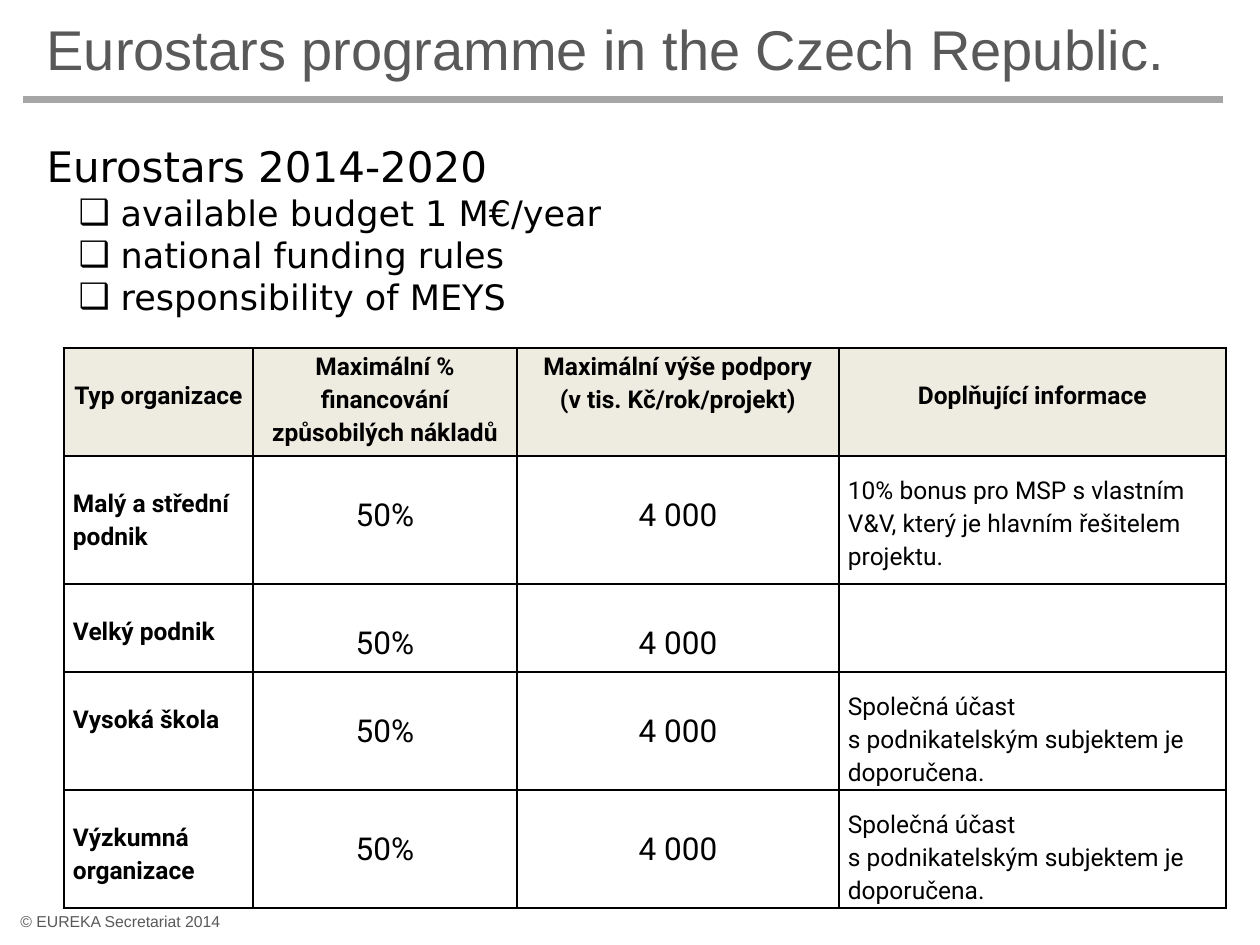
from lxml.etree import SubElement
from pptx import Presentation
from pptx.dml.color import RGBColor
from pptx.enum.shapes import MSO_CONNECTOR
from pptx.enum.text import MSO_ANCHOR, MSO_AUTO_SIZE, PP_ALIGN
from pptx.oxml.ns import qn
from pptx.util import Pt

TITLE = "Eurostars programme in the Czech Republic."
HEAD = "Eurostars 2014-2020"
POINTS = ["available budget 1 M€/year", "national funding rules", "responsibility of MEYS"]
FOOT = "© EUREKA Secretariat 2014"
RATE, CAP = "50%", "4\u00a0000"
JOINT = "Společná účast\vs\u00a0podnikatelským subjektem je doporučena."
HEADS = [
    ("Typ organizace", 29),
    ("Maximální % financování způsobilých nákladů", 0),
    ("Maximální výše podpory\n(v tis. Kč/rok/projekt)", 0),
    ("Doplňující informace", 29),
]
KINDS = [
    ("Malý a střední podnik",
     "10% bonus pro MSP s\u00a0vlastním V&V, který je hlavním řešitelem projektu."),
    ("Velký podnik", ""),
    ("Vysoká škola", JOINT),
    ("Výzkumná organizace", JOINT),
]
COLS = [189, 264, 322, 387]
ROWS = [108, 128, 88, 118, 118]
HEX = {"ink": "000000", "gray": "595959", "rule": "A6A6A6", "head": "EEECE1"}


def px(n):
    return round(n * 914400 / 126)


def tone(name):
    return RGBColor.from_string(HEX[name])


def place(shape, *box):
    shape.left, shape.top, shape.width, shape.height = map(px, box)


def style(par, face, size, color, bold=False, align=PP_ALIGN.LEFT, lead=1):
    par.alignment = align
    par.line_spacing = lead
    par.space_before = par.space_after = Pt(0)
    font = par.font
    font.name, font.size, font.bold = face, Pt(size), bold
    font.color.rgb = tone(color)


def bullet(par, mark, left=0, hang=0):
    props = par._p.get_or_add_pPr()
    props.set("marL", str(px(left)))
    props.set("indent", str(-px(hang)))
    if mark:
        SubElement(props, qn("a:buChar"), char=mark)
    else:
        SubElement(props, qn("a:buNone"))


def border(cell):
    props = cell._tc.get_or_add_tcPr()
    for side in "LRTB":
        line = SubElement(props, qn("a:ln" + side), w=str(Pt(1)))
        fill = SubElement(line, qn("a:solidFill"))
        SubElement(fill, qn("a:srgbClr"), val=HEX["ink"])


def write(cell, text, top, size=14, bold=False, align=PP_ALIGN.LEFT, fill=None):
    border(cell)
    if fill:
        cell.fill.solid()
        cell.fill.fore_color.rgb = tone(fill)
    else:
        cell.fill.background()
    cell.margin_left = cell.margin_right = px(9)
    cell.margin_top, cell.margin_bottom = px(top), 0
    cell.text = text
    for par in cell.text_frame.paragraphs:
        style(par, "Roboto", size, "ink", bold, align, 1.15)


def main():
    deck = Presentation()
    deck.slide_width, deck.slide_height = px(1260), px(945)
    slide = deck.slides.add_slide(deck.slide_layouts[1])
    shapes = slide.shapes

    rule = shapes.add_connector(MSO_CONNECTOR.STRAIGHT, px(23), px(100), px(1223), px(100))
    rule.line.color.rgb = tone("rule")
    rule.line.width = Pt(4)
    SubElement(rule._element.spPr, qn("a:effectLst"))

    title = shapes.title
    place(title, 34, 12, 1197, 72)
    frame = title.text_frame
    frame.text = TITLE
    frame.auto_size = MSO_AUTO_SIZE.NONE
    frame.vertical_anchor = MSO_ANCHOR.MIDDLE
    style(frame.paragraphs[0], "Arial", 32, "gray")

    body = slide.placeholders[1]
    place(body, 34, 116, 1226, 780)
    frame = body.text_frame
    frame.text = "\n".join([HEAD] + POINTS)
    frame.auto_size = MSO_AUTO_SIZE.NONE
    frame.vertical_anchor = MSO_ANCHOR.TOP
    frame.margin_top = px(25)
    first, *rest = frame.paragraphs
    bullet(first, None)
    style(first, "DejaVu Sans", 24, "ink", align=PP_ALIGN.JUSTIFY)
    for par in rest:
        bullet(par, "❑", 74, 42)
        style(par, "DejaVu Sans", 20, "ink", align=PP_ALIGN.JUSTIFY)

    foot = shapes.add_textbox(px(8), px(906), px(248), px(32))
    frame = foot.text_frame
    frame.word_wrap = True
    frame.text = FOOT
    style(frame.paragraphs[0], "Arial", 9, "gray")

    grid = shapes.add_table(len(ROWS), len(COLS), px(64), px(348),
                            px(sum(COLS)), px(sum(ROWS))).table
    grid.first_row = grid.horz_banding = False
    for col, wide in zip(grid.columns, COLS):
        col.width = px(wide)
    for row, high in zip(grid.rows, ROWS):
        row.height = px(high)
    mid = PP_ALIGN.CENTER
    for c, (text, top) in enumerate(HEADS):
        write(grid.cell(0, c), text, top, bold=True, align=mid, fill="head")
    for r, (kind, note) in enumerate(KINDS, 1):
        write(grid.cell(r, 0), kind, 29, bold=True)
        for c, text in enumerate((RATE, CAP), 1):
            write(grid.cell(r, c), text, 36, size=18, align=mid)
        write(grid.cell(r, 3), note, 16)

    deck.save("out.pptx")


if __name__ == "__main__":
    main()
